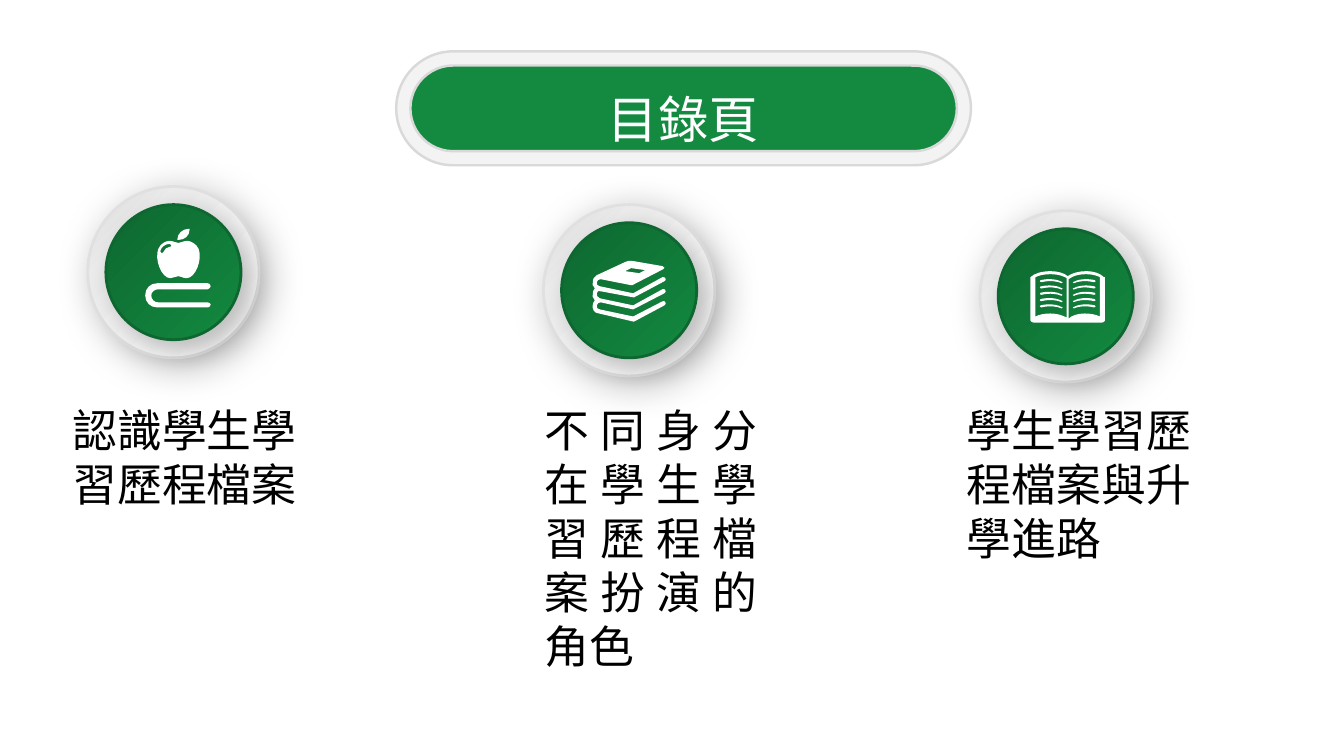
import pptx
import pptx.util
import pptx.dml.color
import pptx.enum.shapes
import pptx.enum.text
import pptx.oxml
import pptx.oxml.ns

Inches = pptx.util.Inches
SHAPE = pptx.enum.shapes.MSO_SHAPE
ALIGN = pptx.enum.text.PP_ALIGN
FIT = pptx.enum.text.MSO_AUTO_SIZE

COLOURS = {
    "white": "FFFFFF", "black": "000000", "pale": "F3F3F3", "edge": "D9D9D9",
    "green": "138A40", "dark": "0E6730", "ring": "ECECEC", "rim": "E0E0E0",
}
TITLE = "目錄頁"
PILLS = [((3.93, 0.51, 5.7, 1.13), "pale"), ((4.07, 0.65, 5.42, 0.85), "green")]

DISCS = [
    {"size": 1.7, "line": "rim", "stops": [(0, "white"), (73, "ring"), (100, "edge")],
     "shadow": {"alpha": 28, "blur": 28, "distance": 7}},
    {"size": 1.34, "line": "dark", "stops": [(0, "green"), (100, "dark")],
     "shadow": {"alpha": 25, "blur": 20, "distance": 9}},
]

APPLE = [
    "M 65 75 C 65 77 63 78 62 78 L 12 78 C 5 78 0 73 0 66 C 0 59 5 54 12 54 L 62 54 "
    "C 63 54 65 55 65 57 C 65 58 63 60 62 60 L 13 60 C 9 60 6 63 6 66 "
    "C 6 70 9 73 13 73 L 62 73 C 63 73 65 74 65 75",
    "M 33 11 C 39 11 44 7 44 1 L 44 0 L 43 0 C 37 0 32 5 32 10 L 32 11",
    "M 53 20 C 51 15 45 12 42 12 C 37 12 36 14 33 14 C 29 14 29 12 24 12 "
    "C 20 12 15 15 13 20 C 9 30 16 49 25 49 C 28 49 30 47 33 47 "
    "C 36 47 37 49 41 49 C 50 49 57 30 53 20",
    "M 24 18 C 22 18 19 20 18 23 C 18 24 17 24 17 24 L 16 24 C 16 24 15 23 15 22 "
    "C 16 18 20 15 24 15 C 25 15 26 16 26 17 C 26 17 25 18 24 18",
]
BOOK_STACK = [
    "M 41 49 L 72 33 C 73 32 74 31 73 30 C 73 29 71 28 70 29 L 41 45 L 8 38 "
    "C 6 37 4 35 5 33 C 5 31 7 30 9 31 L 41 37 L 42 37 L 72 21 C 73 21 74 19 73 18 "
    "C 73 17 71 17 70 17 L 41 33 L 8 26 C 6 26 4 24 5 22 C 5 20 7 19 9 19 L 39 25 "
    "L 40 25 L 71 9 C 73 8 72 7 70 6 L 41 1 C 38 0 35 1 33 2 L 5 15 L 4 16 "
    "C 2 17 1 19 1 21 C 0 24 1 26 3 28 C 2 29 1 31 1 33 C 0 35 1 38 3 40 "
    "C 2 41 1 43 1 44 C 0 48 2 53 7 53 L 41 61 L 42 61 L 72 45 C 73 44 74 43 73 42 "
    "C 73 41 71 40 70 41 L 41 56 L 8 49 C 6 49 4 47 5 45 C 5 43 7 42 9 42 L 41 49",
    "M 39 8 L 53 10 L 47 13 L 33 11",
]
OPEN_BOOK = [
    "M 73 6 C 69 2 63 0 55 0 C 48 0 41 2 37 5 C 34 2 27 0 20 0 C 12 0 4 2 0 6 L 0 49 "
    "C 0 49 1 51 3 51 L 71 51 C 72 51 74 50 74 49 L 74 6",
    "M 36 7 L 36 46 C 32 44 27 42 20 42 C 14 42 9 43 5 45 L 5 6 "
    "C 5 6 10 3 20 3 C 31 3 36 7 36 7",
    "M 69 6 L 69 45 C 65 43 59 42 54 42 C 47 42 41 44 38 47 L 38 8 "
    "C 38 8 43 3 55 3 C 64 3 69 6 69 6",
]
BOOK_LINE = ("M 31 12 C 27 10 19 9 11 11 C 9 11 9 10 10 9 "
             "C 18 7 27 8 32 11 C 32 12 32 12 31 12")
BOOK_WIDTH, LINE_COUNT, LINE_PITCH = 74, 5, 6.25

TOPICS = [
    {"text": "認識學生學習歷程檔案", "box": (0.62, 3.95, 2.51, 1.18), "align": ALIGN.LEFT,
     "centre": (1.72, 2.7), "icon": APPLE, "icon_at": (1.44, 2.27)},
    {"text": "不同身分在學生學習歷程檔案扮演的角色", "box": (5.3, 3.95, 2.31, 2.79),
     "align": ALIGN.JUSTIFY,
     "centre": (6.24, 2.88), "icon": BOOK_STACK, "icon_at": (5.87, 2.58)},
    {"text": "學生學習歷程檔案與升學進路", "box": (9.49, 3.95, 2.44, 1.72), "align": ALIGN.LEFT,
     "centre": (10.57, 2.94), "icon": OPEN_BOOK, "icon_at": (10.22, 2.69)},
]


def rgb(name):
    return pptx.dml.color.RGBColor.from_string(COLOURS[name])


def write(box, text, size, colour, fit, **paragraph_format):
    frame = box.text_frame
    for name, value in {"word_wrap": True, "auto_size": fit,
                        "vertical_anchor": pptx.enum.text.MSO_ANCHOR.TOP}.items():
        setattr(frame, name, value)
    para = frame.paragraphs[0]
    for name, value in paragraph_format.items():
        setattr(para, name, value)
    span = para.add_run()
    span.text = text
    for name, value in {"name": "Arial", "size": pptx.util.Pt(size)}.items():
        setattr(span.font, name, value)
    span.font.color.rgb = rgb(colour)


def xml(tag, attributes="", inner=""):
    namespace = "http://schemas.openxmlformats.org/drawingml/2006/main"
    return pptx.oxml.parse_xml(f'<a:{tag} xmlns:a="{namespace}" {attributes}>{inner}</a:{tag}>')


def add_disc(page, centre, disc):
    size = disc["size"]
    left, top = (value - size / 2 for value in centre)
    shape = page.shapes.add_shape(SHAPE.OVAL, Inches(left), Inches(top), Inches(size), Inches(size))
    shape.rotation = 180
    shape.line.color.rgb = rgb(disc["line"])
    shape.line.width = pptx.util.Pt(2)
    stops = "".join(f'<a:gs pos="{at * 1000}"><a:srgbClr val="{COLOURS[name]}"/></a:gs>'
                    for at, name in disc["stops"])
    outline = shape.line._ln
    outline.addprevious(xml("gradFill", 'rotWithShape="1"',
                            f'<a:gsLst>{stops}</a:gsLst><a:lin ang="2700000" scaled="0"/>'))
    shadow = disc["shadow"]
    outline.addnext(xml("effectLst", "", (
        f'<a:outerShdw blurRad="{shadow["blur"] * 12700}" dist="{shadow["distance"] * 12700}" '
        f'dir="2700000" rotWithShape="0"><a:srgbClr val="{COLOURS["black"]}">'
        f'<a:alpha val="{shadow["alpha"] * 1000}"/></a:srgbClr></a:outerShdw>')))


def read_outline(outline):
    points, curved, command, numbers = [], [], "", []
    for token in outline.split():
        if token.isalpha():
            command = token
            continue
        numbers.append(float(token))
        if len(numbers) == 2:
            points.append(tuple(numbers))
            curved.append(command == "C")
            numbers = []
    return points, curved[1:]


def bend(icon, curved):
    segments = list(icon.element.iter(pptx.oxml.ns.qn("a:lnTo")))
    bent = [segment for segment, is_curve in zip(segments, curved) if is_curve]
    for start in range(0, len(bent), 3):
        curve = xml("cubicBezTo")
        bent[start].addprevious(curve)
        for segment in bent[start:start + 3]:
            curve.append(segment[0])
            segment.getparent().remove(segment)


def add_icon(page, origin, contours):
    placed = [[tuple(Inches(start + value / 100) for start, value in zip(origin, point))
               for point in points] for points, _ in contours]
    builder = page.shapes.build_freeform(*placed[0][0], scale=1.0)
    for index, points in enumerate(placed):
        if index:
            builder.move_to(*points[0])
        builder.add_line_segments(points[1:], close=True)
    icon = builder.convert_to_shape()
    bend(icon, [is_curve for _, curved in contours for is_curve in curved])
    icon.shadow.inherit = False
    icon.fill.solid()
    icon.fill.fore_color.rgb = rgb("white")
    icon.line.fill.background()


def main():
    deck = pptx.Presentation()
    deck.slide_width, deck.slide_height = Inches(13.33), Inches(7.5)
    page = deck.slides.add_slide(deck.slide_layouts[5])

    for box, colour in PILLS:
        pill = page.shapes.add_shape(SHAPE.ROUNDED_RECTANGLE, *map(Inches, box))
        pill.adjustments[0] = 0.5
        pill.shadow.inherit = False
        pill.fill.solid()
        pill.fill.fore_color.rgb = rgb(colour)
        pill.line.color.rgb = rgb("edge")
        pill.line.width = pptx.util.Pt(1.75)

    title = page.shapes.title
    for name, value in zip(("left", "top", "width", "height"), (4.59, 0.52, 4.38, 0.75)):
        setattr(title, name, Inches(value))
    write(title, TITLE, 36, "white", FIT.NONE, alignment=ALIGN.CENTER, line_spacing=1.5)
    title.element.getparent().append(title.element)

    for topic in TOPICS:
        box = page.shapes.add_textbox(*map(Inches, topic["box"]))
        write(box, topic["text"], 32, "black", FIT.SHAPE_TO_FIT_TEXT, alignment=topic["align"])
        for disc in DISCS:
            add_disc(page, topic["centre"], disc)
        add_icon(page, topic["icon_at"], [read_outline(outline) for outline in topic["icon"]])

    points, curved = read_outline(BOOK_LINE)
    for row in range(LINE_COUNT):
        left_line = [(x, y + row * LINE_PITCH) for x, y in points]
        right_line = [(BOOK_WIDTH - x, y) for x, y in left_line]
        for line in (left_line, right_line):
            add_icon(page, TOPICS[-1]["icon_at"], [(line, curved)])

    deck.save("out.pptx")


if __name__ == "__main__":
    main()
